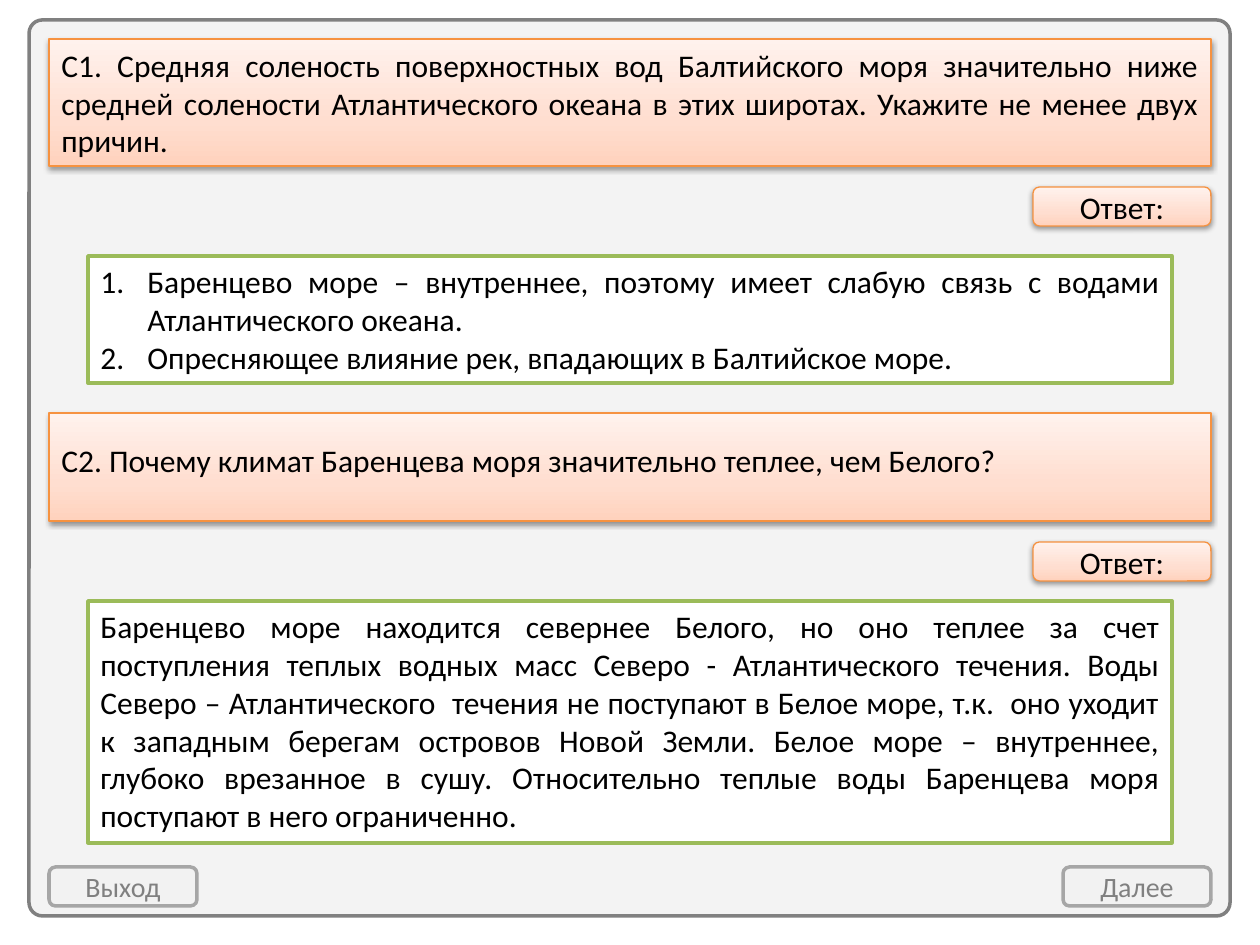
import pptx
import pptx.dml.color
import pptx.enum.shapes
import pptx.enum.text
import pptx.oxml.ns
import pptx.util
from lxml import etree

SHAPE = pptx.enum.shapes.MSO_SHAPE
ALIGN = pptx.enum.text.PP_ALIGN
ANCHOR = pptx.enum.text.MSO_ANCHOR
qn = pptx.oxml.ns.qn

WIDTH, HEIGHT = 1260, 945
PX = 914400 / 126
MARGIN = 49
ANSWER_MARGIN = 88
BUTTON_HEIGHT = 39
TEXT_INDENT = 47
FONT = "Calibri"
PEACH_STOPS = [(0, "FFD2BD"), (35, "FFDED0"), (100, "FFF2ED")]

FRAME = (29, 20, 1201, 896)
TASKS = [
    {
        "question": "С1. Средняя соленость поверхностных вод Балтийского моря значительно ниже "
                    "средней солености Атлантического океана в этих широтах. Укажите не менее двух причин.",
        "question_span": (39, 127),
        "bottom_inset": 6,
        "answer": [
            "Баренцево море – внутреннее, поэтому имеет слабую связь с водами Атлантического океана.",
            "Опресняющее влияние рек, впадающих в Балтийское море.",
        ],
        "answer_span": (256, 127),
        "numbered": True,
    },
    {
        "question": "С2. Почему климат Баренцева моря значительно теплее, чем Белого?",
        "question_span": (413, 108),
        "bottom_inset": 20,
        "answer": [
            "Баренцево море находится севернее Белого, но оно теплее за счет поступления теплых "
            "водных масс Северо - Атлантического течения. Воды Северо – Атлантического  течения "
            "не поступают в Белое море, т.к.  оно уходит к западным берегам островов Новой Земли. "
            "Белое море – внутреннее, глубоко врезанное в сушу. Относительно теплые воды "
            "Баренцева моря поступают в него ограниченно.",
        ],
        "answer_span": (601, 242),
        "numbered": False,
    },
]
ANSWER_LABEL = "Ответ:"
ANSWER_LABEL_WIDTH = 178
ANSWER_LABEL_GAP = 21
NAVIGATION = ["Выход", "Далее"]
NAVIGATION_TOP, NAVIGATION_WIDTH = 867, 148


def emu(pixels):
    return pptx.util.Emu(round(pixels * PX))


def color(value):
    return pptx.dml.color.RGBColor.from_string(value)


def add_color(parent, value, alpha=None):
    node = etree.SubElement(parent, qn("a:srgbClr"), val=value)
    if alpha is not None:
        etree.SubElement(node, qn("a:alpha"), val=str(alpha * 1000))


def add_box(slide, preset, place, line, points):
    box = slide.shapes.add_shape(preset, *map(emu, place))
    box.shadow.inherit = False
    box.line.color.rgb = color(line)
    box.line.width = pptx.util.Pt(points)
    return box


def fill_solid(box, value, alpha=100):
    box.fill.solid()
    box.fill.fore_color.rgb = color(value)
    if alpha < 100:
        node = box._element.spPr.find(qn("a:solidFill")).find(qn("a:srgbClr"))
        etree.SubElement(node, qn("a:alpha"), val=str(alpha * 1000))


def style_peach(box):
    box.fill.gradient()
    box.fill.gradient_angle = 90
    properties = box._element.spPr
    stops = properties.find(qn("a:gradFill")).find(qn("a:gsLst"))
    for stop in list(stops):
        stops.remove(stop)
    for position, value in PEACH_STOPS:
        add_color(etree.SubElement(stops, qn("a:gs"), pos=str(position * 1000)), value)
    shadow = etree.SubElement(properties.find(qn("a:effectLst")), qn("a:outerShdw"),
                              blurRad="40000", dist="20000", dir="5400000", rotWithShape="0")
    add_color(shadow, "000000", 38)


def write(box, texts, align, anchor=ANCHOR.MIDDLE, size=18, value="000000", numbered=False):
    frame = box.text_frame
    frame.word_wrap = True
    frame.vertical_anchor = anchor
    for index, text in enumerate(texts):
        paragraph = frame.add_paragraph() if index else frame.paragraphs[0]
        paragraph.text = text
        paragraph.alignment = align
        if numbered:
            properties = paragraph._p.get_or_add_pPr()
            properties.set("marL", str(emu(TEXT_INDENT)))
            properties.set("indent", str(-emu(TEXT_INDENT)))
            etree.SubElement(properties, qn("a:buFont"), typeface="+mj-lt")
            etree.SubElement(properties, qn("a:buAutoNum"), type="arabicPeriod")
        paragraph.font.name = FONT
        paragraph.font.size = pptx.util.Pt(size)
        paragraph.font.color.rgb = color(value)


def add_task(slide, task):
    top, height = task["question_span"]
    question = add_box(slide, SHAPE.RECTANGLE, (MARGIN, top, WIDTH - 2 * MARGIN, height), "F69240", 0.75)
    style_peach(question)
    write(question, [task["question"]], ALIGN.JUSTIFY)
    question.text_frame.margin_bottom = emu(task["bottom_inset"])

    label_place = (WIDTH - MARGIN - ANSWER_LABEL_WIDTH, top + height + ANSWER_LABEL_GAP,
                   ANSWER_LABEL_WIDTH, BUTTON_HEIGHT)
    label = add_box(slide, SHAPE.ROUNDED_RECTANGLE, label_place, "F69240", 0.75)
    style_peach(label)
    write(label, [ANSWER_LABEL], ALIGN.CENTER)

    top, height = task["answer_span"]
    answer = add_box(slide, SHAPE.RECTANGLE,
                     (ANSWER_MARGIN, top, WIDTH - 2 * ANSWER_MARGIN, height), "9BBB59", 2)
    fill_solid(answer, "FFFFFF")
    write(answer, task["answer"], ALIGN.JUSTIFY, ANCHOR.TOP, numbered=task["numbered"])


def main():
    deck = pptx.Presentation()
    deck.slide_width, deck.slide_height = emu(WIDTH), emu(HEIGHT)
    slide = deck.slides.add_slide(deck.slide_layouts[6])

    frame = add_box(slide, SHAPE.ROUNDED_RECTANGLE, FRAME, "808080", 2)
    frame.adjustments[0] = 0.015
    fill_solid(frame, "F2F2F2", 90)

    for task in TASKS:
        add_task(slide, task)

    for text, left in zip(NAVIGATION, (MARGIN, WIDTH - MARGIN - NAVIGATION_WIDTH)):
        button = add_box(slide, SHAPE.ROUNDED_RECTANGLE,
                         (left, NAVIGATION_TOP, NAVIGATION_WIDTH, BUTTON_HEIGHT), "A6A6A6", 2)
        fill_solid(button, "F2F2F2", 90)
        write(button, [text], ALIGN.CENTER, size=16, value="808080")

    deck.save("out.pptx")


if __name__ == "__main__":
    main()
